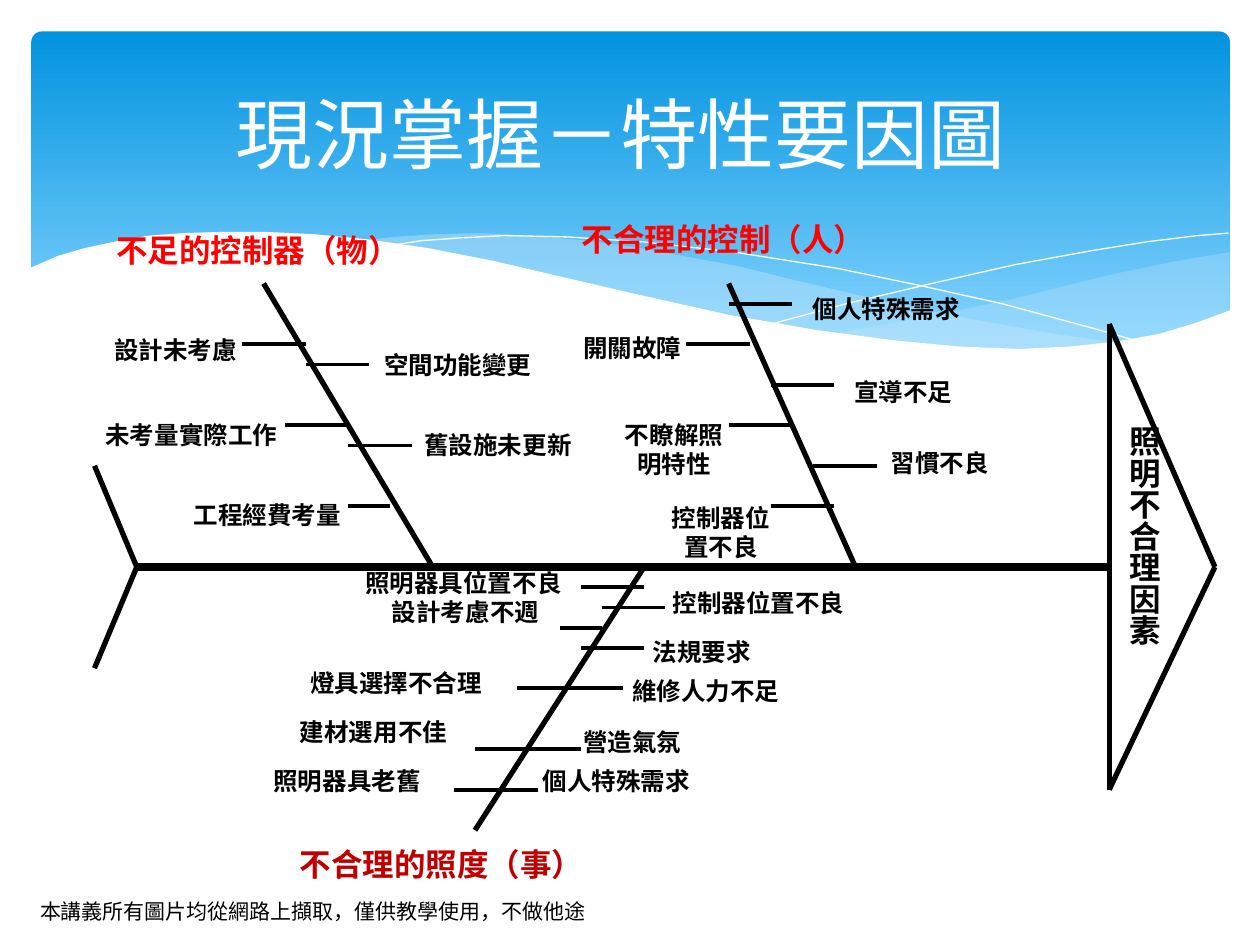
from lxml import etree
from pptx import Presentation
from pptx.dml.color import RGBColor
from pptx.enum.shapes import MSO_CONNECTOR, MSO_SHAPE
from pptx.enum.text import MSO_ANCHOR, PP_ALIGN
from pptx.oxml.ns import qn
from pptx.util import Pt

LEFT, CENTER = PP_ALIGN.LEFT, PP_ALIGN.CENTER
TOP, MIDDLE = MSO_ANCHOR.TOP, MSO_ANCHOR.MIDDLE
STRAIGHT, ROUNDED = MSO_CONNECTOR.STRAIGHT, MSO_SHAPE.ROUNDED_RECTANGLE
CJK = "Noto Sans CJK SC"
COLORS = {"black": "000000", "white": "FFFFFF", "red": "FF0000", "dark_red": "C00000",
          "sky_top": "0293E0", "sky_bottom": "83D3FE", "mist": "C6E7FC"}

RIGHT_BAND = [
    (702.7, 144), (673.2, 149), (641.5, 155.5), (619.9, 160.6), (579.6, 170.6), (542.2, 178.6),
    (508.3, 185), (475.9, 190.8), (507.6, 195.1), (536.4, 198), (562.3, 199.4), (586.1, 200.2),
    (614.9, 198.7), (640.1, 195.8), (663.1, 190.8), (683.3, 185), (702.7, 177.8)]
LEFT_BAND = [
    (643, 196.6), (602.6, 190.8), (558, 182.9), (508.3, 172.8), (452.9, 159.8), (420.5, 151.9),
    (389.5, 146.2), (361.4, 141.1), (334.8, 137.5), (302.4, 134.6), (273.6, 133.2), (247.7, 133.9),
    (225.4, 135.4), (205.9, 137.5), (246.2, 143.3), (290.9, 151.9), (323.3, 159.8), (381.6, 172.8),
    (432.7, 183.6), (478.8, 191.5), (519.8, 197.3), (556.6, 199.4), (589, 200.2), (617, 199.4)]
FALLING_CURVE = [
    (222.5, 140.4), (241.2, 137.5), (261.4, 136.1), (288.7, 134.6), (324, 135.4), (367.2, 138.2),
    (419, 144), (478.8, 153.4), (523.4, 162.7), (572.4, 173.5), (625.7, 187.9), (653, 195.8)]
RISING_CURVE = [
    (441.4, 185), (483.8, 173.5), (538.6, 160.6), (580.3, 151.2), (623.5, 143.3), (655.2, 138.2),
    (684.7, 134.6), (702, 133.2)]
WHITE_WAVE = [
    (703.4, 177.1), (684, 184.3), (662.4, 190.8), (638.6, 195.1), (612, 198), (582.5, 199.4),
    (547.9, 198), (509.8, 194.4), (466.6, 188.6), (416.9, 180), (362.2, 167.8), (321.8, 158.4),
    (281.5, 149), (244.8, 141.8), (210.2, 136.8), (180, 133.9), (151.9, 132.5), (127.4, 132.5),
    (105.1, 133.2), (85.7, 134.6), (68.4, 137.5), (48.2, 141.8), (33.1, 146.2), (16.6, 153.4),
    (16.6, 236.9), (703.4, 236.9)]

HEADINGS = [
    ("不合理的控制（人）", (303, 122.4, 221, 29), "red"),
    ("不足的控制器（物）", (48.2, 128.2, 198.7, 31), "red"),
    ("不合理的照度（事）", (144.7, 479.5, 215.3, 29), "dark_red")]
CAUSES = [
    ("建材選用不佳", (155.5, 406, 116, 27), CENTER),
    ("營造氣氛", (326.2, 411.8, 83.5, 23), LEFT),
    ("法規要求", (365.8, 360.7, 71.3, 22), LEFT),
    ("控制器位置不良", (377.3, 332.6, 133.2, 23), LEFT),
    ("照明器具位置不良", (201.6, 321.1, 130.3, 22), LEFT),
    ("燈具選擇不合理", (167, 378, 118.8, 27), CENTER),
    ("照明器具老舊", (144.7, 434.2, 107.3, 27), CENTER),
    ("設計考慮不週", (201.6, 337.7, 128.9, 22), CENTER),
    ("個人特殊需求", (303, 434.2, 113.8, 23), LEFT),
    ("維修人力不足", (354.2, 383, 105.8, 26), LEFT),
    ("設計未考慮", (54, 187.9, 92.9, 31), CENTER),
    ("未考量實際工作", (48.2, 236.2, 122.4, 23), CENTER),
    ("空間功能變更", (212.4, 196.6, 108, 25), LEFT),
    ("工程經費考量", (99.4, 282.2, 106.6, 22), CENTER),
    ("舊設施未更新", (235.4, 241.9, 107.3, 27), LEFT),
    ("開關故障", (326.2, 186.5, 71.3, 36), LEFT),
    ("個人特殊需求", (457.2, 164.2, 106.6, 36), LEFT),
    ("不瞭解照\n明特性", (342.7, 236.2, 85, 36), CENTER),
    ("控制器位\n置不良", (365.8, 283.7, 92.2, 36), CENTER),
    ("習慣不良", (501.8, 252.7, 72, 36), LEFT),
    ("宣導不足", (481, 211.7, 83.5, 36), LEFT)]

GRID_X, GRID_Y, STEP_X, STEP_Y = 54, 324, 12.08, 11.57
SPINE = (2, 0, 48, 0)
BONES = [(26, 0, 18, 13), (8, -14, 16, 0), (30, -14, 36, 0)]
HEAD_AND_TAIL = [(48, -12, 53, 0), (53, 0, 48, 11), (48, -12, 48, 11), (0, -5, 2, 0), (2, 0, 0, 5)]
TWIGS = [
    (23, 26, 1), (22, 24, 3), (20, 22, 6), (18, 20, 9), (17, 19, 11),
    (24, 27, 2), (23, 26, 4), (22, 25, 6), (20, 23, 9), (19, 21, 11),
    (7, 10, -11), (9, 12, -7), (12, 14, -3), (10, 13, -10), (12, 15, -6),
    (28, 31, -11), (30, 33, -13), (30, 33, -7), (32, 35, -3), (32, 35, -9), (34, 37, -5)]


def rgb(name):
    return RGBColor.from_string(COLORS[name])


def add_text(s, text, box, size=14, color="black", font=CJK, bold=True, align=CENTER,
             anchor=TOP, wrap=True, vertical=False):
    tf = s.shapes.add_textbox(*map(Pt, box)).text_frame
    tf.word_wrap = wrap
    tf.vertical_anchor = anchor
    if vertical:
        tf._txBody.bodyPr.set("vert", "eaVert")
    for i, line in enumerate(text.split("\n")):
        p = tf.add_paragraph() if i else tf.paragraphs[0]
        p.alignment = align
        r = p.add_run()
        r.text = line
        r.font.size, r.font.bold, r.font.name = Pt(size), bold, font
        r.font.color.rgb = rgb(color)
        etree.SubElement(r._r.get_or_add_rPr(), qn("a:ea")).set("typeface", CJK)


def add_outline(s, points, fill=None, alpha=None):
    pts = [(Pt(x), Pt(y)) for x, y in points]
    builder = s.shapes.build_freeform(*pts[0], scale=1.0)
    builder.add_line_segments(pts[1:], close=fill is not None)
    sp = builder.convert_to_shape()
    sp.shadow.inherit = False
    if fill is None:
        sp.fill.background()
        sp.line.color.rgb = rgb("white")
        sp.line.width = Pt(0)
        return
    sp.fill.solid()
    sp.fill.fore_color.rgb = rgb(fill)
    sp.line.fill.background()
    if alpha:
        clr = sp._element.spPr.find(qn("a:solidFill"))[0]
        etree.SubElement(clr, qn("a:alpha")).set("val", str(alpha * 1000))


def add_bone(s, col1, row1, col2, row2, width=3):
    ends = [Pt(v) for col, row in ((col1, row1), (col2, row2))
            for v in (GRID_X + col * STEP_X, GRID_Y + row * STEP_Y)]
    sp = s.shapes.add_connector(STRAIGHT, *ends)
    sp.line.color.rgb = rgb("black")
    sp.line.width = Pt(width)
    etree.SubElement(sp._element.spPr, qn("a:effectLst"))


def add_sky(s):
    sp = s.shapes.add_shape(ROUNDED, Pt(18), Pt(18), Pt(684.7), Pt(194.4))
    sp.adjustments[0] = 0.03
    sp.shadow.inherit = False
    sp.line.fill.background()
    sp.fill.gradient()
    sp.fill.gradient_angle = 270
    for stop, (pos, name) in zip(sp.fill.gradient_stops, ((0, "sky_top"), (0.9, "sky_bottom"))):
        stop.position = pos
        stop.color.rgb = rgb(name)


def main():
    prs = Presentation()
    prs.slide_width, prs.slide_height = Pt(720), Pt(540)
    s = prs.slides.add_slide(prs.slide_layouts[6])

    add_sky(s)
    add_outline(s, RIGHT_BAND, "mist", 29)
    add_outline(s, LEFT_BAND, "mist", 40)
    add_outline(s, FALLING_CURVE)
    add_outline(s, RISING_CURVE)
    add_outline(s, WHITE_WAVE, "white")

    add_text(s, "本講義所有圖片均從網路上擷取，僅供教學使用，不做他途", (15.8, 509.8, 329.8, 21.6),
             size=12, bold=False, align=LEFT, wrap=False)
    add_text(s, "現況掌握－特性要因圖 ", (36, 26.6, 648, 98.6), size=44, color="white",
             font="Cabin", bold=False, anchor=MIDDLE)
    for text, box, color in HEADINGS:
        add_text(s, text, box, size=18, color=color)
    add_text(s, "照明不合理因素", (632.2, 236.2, 36, 170), size=18, vertical=True)
    for text, box, align in CAUSES:
        add_text(s, text, box, align=align)

    for bone in BONES + HEAD_AND_TAIL:
        add_bone(s, *bone)
    for start, end, row in TWIGS:
        add_bone(s, start, row, end, row, width=2.25)
    add_bone(s, *SPINE, width=4.5)
    prs.save("out.pptx")


if __name__ == "__main__":
    main()
